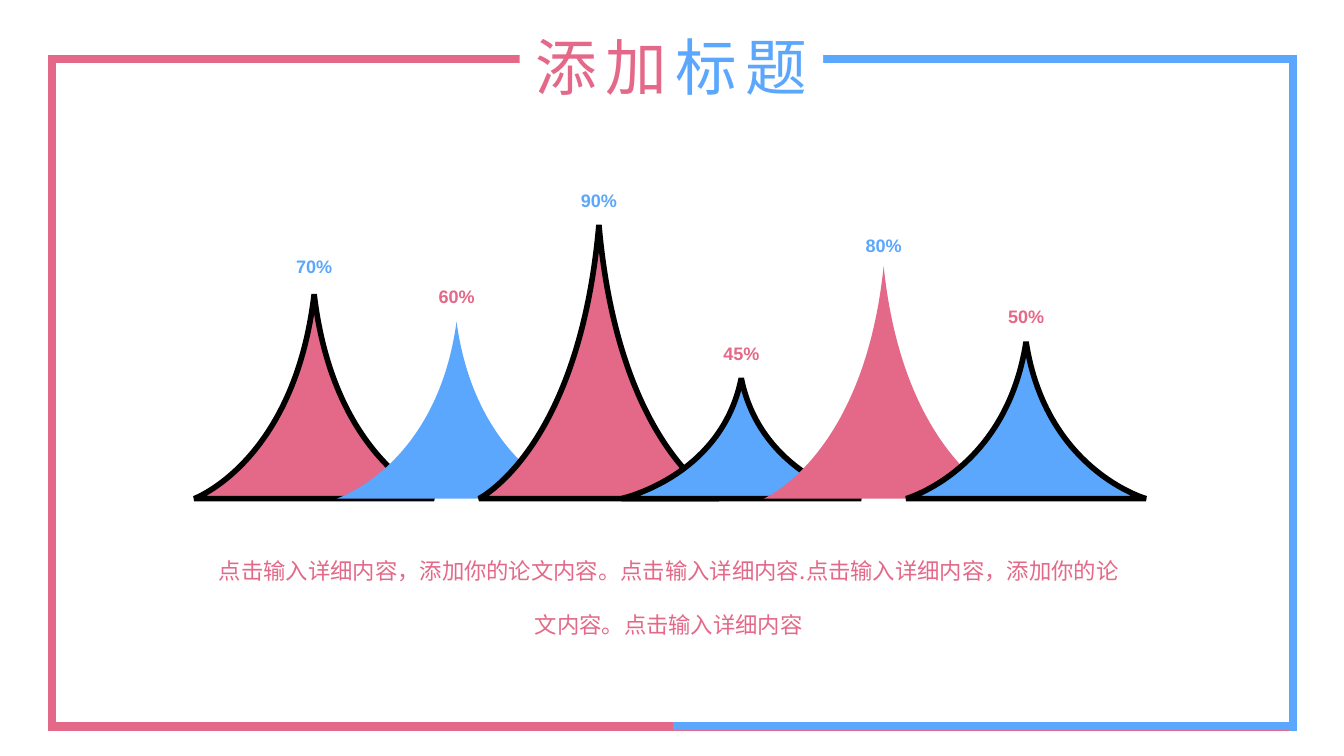
import pptx
import pptx.util
import pptx.dml.color
import pptx.enum.shapes
import pptx.enum.text
import pptx.oxml.ns
import lxml.etree

Pt = pptx.util.Pt
qn = pptx.oxml.ns.qn
COLORS = {"pink": "E46988", "blue": "5BA7FD", "black": "000000", "white": "FFFFFF"}
CJK_FONT = "Noto Sans CJK SC"
RECTANGLE = pptx.enum.shapes.MSO_SHAPE.RECTANGLE
CENTER = pptx.enum.text.PP_ALIGN.CENTER


def add_run(paragraph, text, size, font, color_name, spacing=0):
    paragraph.alignment = CENTER
    run = paragraph.add_run()
    run.text = text
    run.font.size = Pt(size)
    run.font.name = font
    run.font.color.rgb = pptx.dml.color.RGBColor.from_string(COLORS[color_name])
    properties = run.font._element
    lxml.etree.SubElement(properties, qn("a:ea")).set("typeface", font)
    if spacing:
        properties.set("spc", str(spacing * 100))
    return run


def set_line(shape, color_name, width):
    shape.line.color.rgb = pptx.dml.color.RGBColor.from_string(COLORS[color_name])
    shape.line.width = Pt(width)
    line = shape._element.spPr.find(qn("a:ln"))
    lxml.etree.SubElement(line, qn("a:miter")).set("lim", "800000")


presentation = pptx.Presentation()
presentation.slide_width = Pt(960)
presentation.slide_height = Pt(540)
slide = presentation.slides.add_slide(presentation.slide_layouts[6])
shapes = slide.shapes

# Frame: pink rectangle, right half overlaid in blue
frame = shapes.add_shape(RECTANGLE, Pt(37.2), Pt(42), Pt(886.4), Pt(477))
frame.shadow.inherit = False
frame.fill.background()
set_line(frame, "pink", 6)
for x1, y1, x2, y2 in [(480.4, 42, 923.6, 42), (480.4, 518.4, 923.6, 518.4),
                       (923.6, 39.4, 923.6, 522)]:
    edge = shapes.add_connector(
        pptx.enum.shapes.MSO_CONNECTOR.STRAIGHT, Pt(x1), Pt(y1), Pt(x2), Pt(y2))
    set_line(edge, "blue", 6)
    lxml.etree.SubElement(edge._element.spPr, qn("a:effectLst"))

# Peaks: label, top, label top, peak colour, label colour, outlined
peaks = [
    ("70%", 210.2, 179, "pink", "blue", True),
    ("60%", 229.7, 200.6, "blue", "pink", False),
    ("90%", 160.6, 131.8, "pink", "blue", True),
    ("45%", 270.2, 241.2, "blue", "pink", True),
    ("80%", 190.1, 164.2, "pink", "blue", False),
    ("50%", 244.1, 214.6, "blue", "pink", True),
]
BASE, HALF_WIDTH, FIRST_CENTER, PITCH = 356.2, 85.7, 224.4, 101.7
UNIT = 100  # path units per point

for index, (label, top, label_top, fill, label_color, outlined) in enumerate(peaks):
    center = FIRST_CENTER + index * PITCH
    right, left = center + HALF_WIDTH, center - HALF_WIDTH
    builder = shapes.build_freeform(right * UNIT, BASE * UNIT, scale=Pt(1) / UNIT)
    corners = [(center, top), (left, BASE), (right, BASE)]
    builder.add_line_segments([(x * UNIT, y * UNIT) for x, y in corners], close=True)
    peak = builder.convert_to_shape()

    # Bend both flanks: control points lie at the feet and just beside the tip
    height = BASE - top
    bend_y = height * 0.82
    flanks = [
        [(2 * HALF_WIDTH, height), (HALF_WIDTH + 14.1, bend_y), (HALF_WIDTH, 0)],
        [(HALF_WIDTH - 14.1, bend_y), (0, height), (0, height)],
    ]
    segments = list(peak._element.iter(qn("a:lnTo")))
    for segment, points in zip(segments, flanks):
        curve = lxml.etree.Element(qn("a:cubicBezTo"))
        for x, y in points:
            point = lxml.etree.SubElement(curve, qn("a:pt"))
            point.set("x", str(round(x * UNIT)))
            point.set("y", str(round(y * UNIT)))
        segment.getparent().replace(segment, curve)

    peak.shadow.inherit = False
    peak.fill.solid()
    peak.fill.fore_color.rgb = pptx.dml.color.RGBColor.from_string(COLORS[fill])
    if outlined:
        set_line(peak, "black", 4)
    else:
        peak.line.fill.background()

# Percentages above the tips
for index, (label, top, label_top, fill, label_color, outlined) in enumerate(peaks):
    center = FIRST_CENTER + index * PITCH
    box = shapes.add_textbox(Pt(center - 30.6), Pt(label_top), Pt(61.2), Pt(20.2))
    box.text_frame.word_wrap = False
    add_run(box.text_frame.paragraphs[0], label, 12.9, "Arial", label_color).font.bold = True

# Description
description = shapes.add_textbox(Pt(150.5), Pt(375.8), Pt(654.5), Pt(115.9))
text_frame = description.text_frame
text_frame.word_wrap = True
text_frame.margin_left = text_frame.margin_right = Pt(5.8)
text_frame.margin_top = text_frame.margin_bottom = Pt(2.9)
paragraph = text_frame.paragraphs[0]
paragraph.line_spacing = 2.0
add_run(paragraph,
        "点击输入详细内容，添加你的论文内容。点击输入详细内容.点击输入详细内容，"
        "添加你的论文内容。点击输入详细内容", 16, CJK_FONT, "pink")

# Title on a white plate that interrupts the frame
title = shapes.add_shape(RECTANGLE, Pt(371.2), Pt(16.8), Pt(216.8), Pt(60.5))
title.shadow.inherit = False
title.fill.solid()
title.fill.fore_color.rgb = pptx.dml.color.RGBColor.from_string(COLORS["white"])
title.line.fill.background()
title.text_frame.word_wrap = False
title.text_frame.auto_size = pptx.enum.text.MSO_AUTO_SIZE.SHAPE_TO_FIT_TEXT
title.text_frame.vertical_anchor = pptx.enum.text.MSO_ANCHOR.MIDDLE
for text, color_name in [("添加", "pink"), ("标题", "blue")]:
    add_run(title.text_frame.paragraphs[0], text, 44, CJK_FONT, color_name, spacing=6)

presentation.save("out.pptx")
